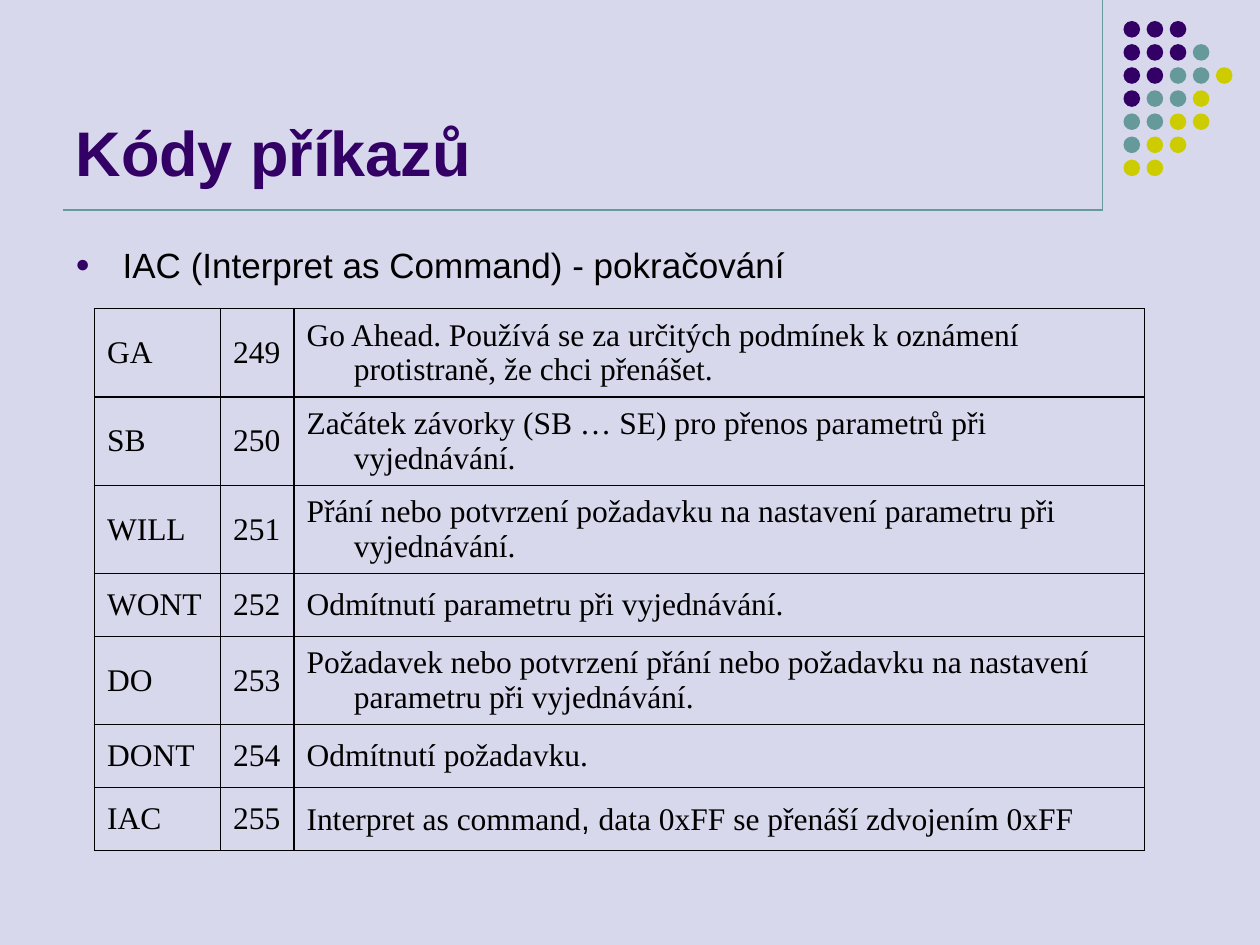
from lxml import etree
from pptx import Presentation
from pptx.dml.color import RGBColor
from pptx.enum import shapes, text
from pptx.oxml import ns
from pptx.util import Pt

TITLE = "Kódy příkazů"
BULLET = "IAC (Interpret as Command) - pokračování"
COMMANDS = [
    ("GA", "249", ["Go Ahead. Používá se za určitých podmínek k oznámení protistraně, že chci přenášet."]),
    ("SB", "250", ["Začátek závorky (SB … SE) pro přenos parametrů při vyjednávání."]),
    ("WILL", "251", ["Přání nebo potvrzení požadavku na nastavení parametru při vyjednávání."]),
    ("WONT", "252", ["Odmítnutí parametru při vyjednávání."]),
    ("DO", "253", ["Požadavek nebo potvrzení přání nebo požadavku na nastavení parametru při vyjednávání."]),
    ("DONT", "254", ["Odmítnutí požadavku."]),
    ("IAC", "255", ["Interpret as command", ", ", "data 0xFF se přenáší zdvojením 0xFF"]),
]
COLORS = {"background": "D8D8EC", "purple": "330066", "teal": "669999", "lime": "CCCC00", "black": "000000"}
DOT_COLORS = {"P": "purple", "T": "teal", "L": "lime"}
DOT_ROWS = ["PPP", "PPPT", "PPTTL", "PTTL", "TTLL", "TLL", "LL"]
DOT_LEFT, DOT_TOP, DOT_STEP, DOT_SIZE = 642, 12, 13.2, 9.5
RULES = [(630, 0, 630, 120), (36, 120, 630, 120)]
COLUMN_WIDTHS = [72, 42, 486]
ROW_HEIGHT = 36
INDENT = 27


def rgb(name):
    """Return the named palette colour."""
    return RGBColor.from_string(COLORS[name])


def style_run(run, font, size, color, bold=False):
    """Format the font of one run."""
    run.font.name, run.font.size, run.font.bold = font, Pt(size), bold
    run.font.color.rgb = rgb(color)


def hang(paragraph):
    """Give a paragraph a hanging indent and return its properties."""
    properties = paragraph._p.get_or_add_pPr()
    properties.set("marL", str(Pt(INDENT)))
    properties.set("indent", str(-Pt(INDENT)))
    return properties


def add_child(parent, tag, **attributes):
    """Append a DrawingML element."""
    return etree.SubElement(parent, ns.qn(tag), attributes)


def add_decoration(slide):
    """Draw the two rules and the grid of dots."""
    for ends in RULES:
        rule = slide.shapes.add_connector(shapes.MSO_CONNECTOR.STRAIGHT, *map(Pt, ends))
        rule.line.color.rgb = rgb("teal")
        rule.line.width = Pt(0.75)
        add_child(rule._element.spPr, "a:effectLst")
    for row, codes in enumerate(DOT_ROWS):
        for column, code in enumerate(codes):
            dot = slide.shapes.add_shape(
                shapes.MSO_SHAPE.OVAL, Pt(DOT_LEFT + column * DOT_STEP),
                Pt(DOT_TOP + row * DOT_STEP), Pt(DOT_SIZE), Pt(DOT_SIZE))
            dot.shadow.inherit = False
            dot.fill.solid()
            dot.fill.fore_color.rgb = rgb(DOT_COLORS[code])
            dot.line.fill.background()


def add_heading(slide):
    """Fill the title and the bullet line."""
    title = slide.shapes.title
    title.left, title.top, title.width, title.height = Pt(36), Pt(9.5), Pt(594), Pt(102)
    title.text_frame.text = TITLE
    title.text_frame.vertical_anchor = text.MSO_ANCHOR.BOTTOM
    paragraph = title.text_frame.paragraphs[0]
    paragraph.alignment = text.PP_ALIGN.LEFT
    style_run(paragraph.runs[0], "Arial", 36, "purple", bold=True)

    body = slide.shapes.add_textbox(Pt(36), Pt(135.5), Pt(624), Pt(58))
    body.text_frame.word_wrap = True
    body.text_frame.text = BULLET
    paragraph = body.text_frame.paragraphs[0]
    paragraph.space_before = Pt(4)
    style_run(paragraph.runs[0], "Arial", 20, "black")
    properties = hang(paragraph)
    add_child(add_child(properties, "a:buClr"), "a:srgbClr", val=COLORS["purple"])
    add_child(properties, "a:buSzPct", val="70000")
    add_child(properties, "a:buFont", typeface="Arial")
    add_child(properties, "a:buChar", char="●")


def format_cell(cell, parts):
    """Write the runs of a cell and draw its borders."""
    cell.vertical_anchor = text.MSO_ANCHOR.MIDDLE
    paragraph = cell.text_frame.paragraphs[0]
    hang(paragraph)
    for part in parts:
        run = paragraph.add_run()
        run.text = part
        style_run(run, "Arial" if part == ", " else "Times New Roman", 18, "black")
    properties = cell._tc.get_or_add_tcPr()
    for side in ("a:lnL", "a:lnR", "a:lnT", "a:lnB"):
        border = add_child(properties, side, w=str(Pt(0.75)))
        add_child(add_child(border, "a:solidFill"), "a:srgbClr", val=COLORS["black"])
    cell.fill.background()


def add_command_table(slide):
    """Build the table of command codes."""
    frame = slide.shapes.add_table(
        len(COMMANDS), len(COLUMN_WIDTHS), Pt(54), Pt(176.4),
        Pt(sum(COLUMN_WIDTHS)), Pt(ROW_HEIGHT * len(COMMANDS)))
    table = frame.table
    table.first_row = table.horz_banding = False
    for column, width in zip(table.columns, COLUMN_WIDTHS):
        column.width = Pt(width)
    for row, (name, code, meaning) in zip(table.rows, COMMANDS):
        row.height = Pt(ROW_HEIGHT)
        for cell, parts in zip(row.cells, ([name], [code], meaning)):
            format_cell(cell, parts)


def main():
    """Build and save the slide."""
    presentation = Presentation()
    presentation.slide_width, presentation.slide_height = Pt(720), Pt(540)
    slide = presentation.slides.add_slide(presentation.slide_layouts[5])
    slide.background.fill.solid()
    slide.background.fill.fore_color.rgb = rgb("background")
    add_decoration(slide)
    add_heading(slide)
    add_command_table(slide)
    presentation.save("out.pptx")


if __name__ == "__main__":
    main()
